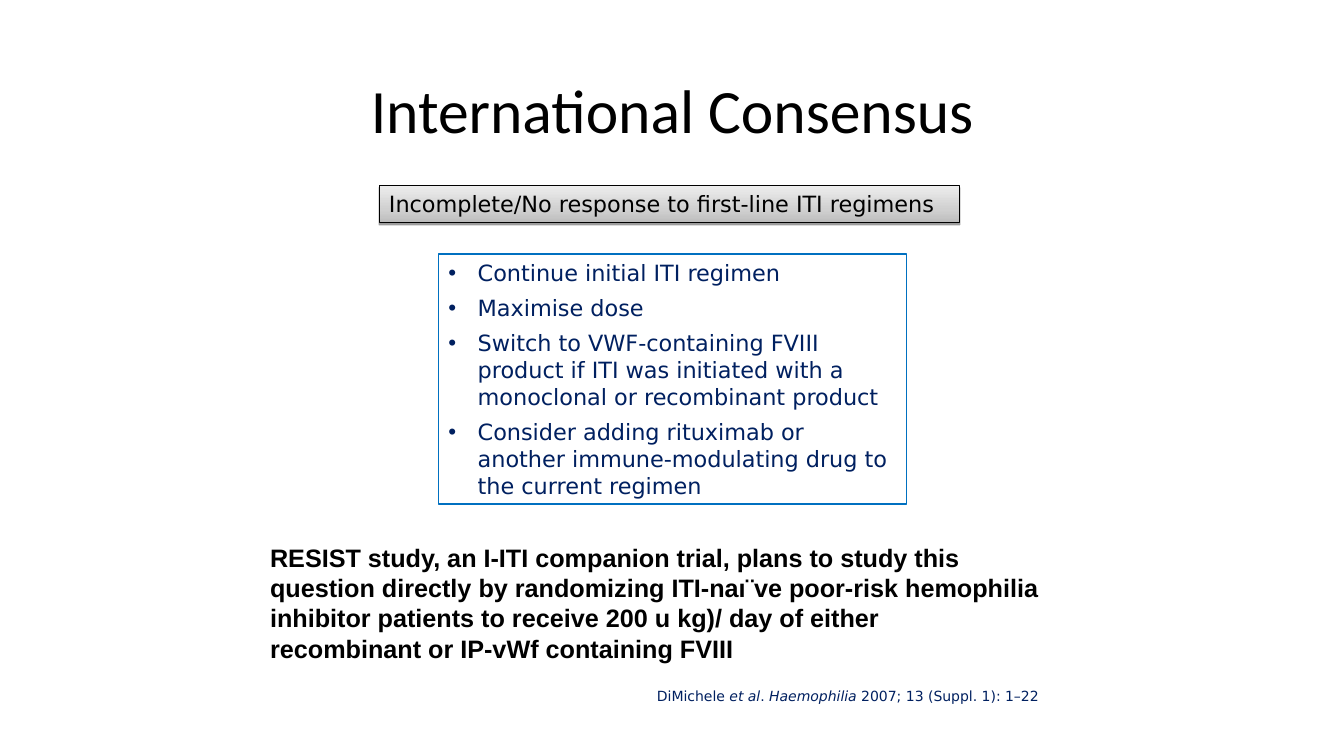
from dataclasses import dataclass

from lxml.etree import SubElement
from pptx import Presentation
from pptx.dml.color import RGBColor
from pptx.enum.shapes import MSO_SHAPE as Shape
from pptx.enum.text import MSO_ANCHOR as Anchor, MSO_AUTO_SIZE as AutoSize, PP_ALIGN as Align
from pptx.oxml.ns import qn
from pptx.util import Inches, Pt


@dataclass(frozen=True)
class Theme:
    black: str = "000000"
    white: str = "FFFFFF"
    navy: str = "002060"
    border: str = "0070C0"
    gradient: tuple = ((0, "BCBCBC"), (35, "D0D0D0"), (100, "EDEDED"))
    title_font: str = "Calibri"
    body_font: str = "DejaVu Sans"
    study_font: str = "Arial"
    title_size: int = 44
    body_size: int = 16
    study_size: int = 18
    citation_size: int = 10


THEME = Theme()

TREATMENT_OPTIONS = (
    "Continue initial ITI regimen",
    "Maximise dose",
    "Switch to VWF-containing FVIII product if ITI was initiated with a "
    "monoclonal or recombinant product",
    "Consider adding rituximab or another immune-modulating drug to the current regimen",
)
STUDY_LINES = (
    "RESIST study, an I-ITI companion trial, plans to study this",
    "question directly by randomizing ITI-naı¨ve poor-risk hemophilia",
    "inhibitor patients to receive 200 u kg)/ day of either",
    "recombinant or IP-vWf containing FVIII",
)
# Citation pieces: text, italic
CITATION = (
    ("DiMichele ", False),
    ("et al", True),
    (". ", False),
    ("Haemophilia", True),
    (" 2007; 13 (Suppl. 1): 1–22", False),
)


def place(box):
    return [Inches(value) for value in box]


def style(paragraph, font, size, color, bold=False, align=Align.LEFT):
    paragraph.alignment = align
    paragraph.font.name = font
    paragraph.font.size = Pt(size)
    paragraph.font.bold = bold
    paragraph.font.color.rgb = RGBColor.from_string(color)


def set_frame(shape, wrap=True, anchor=Anchor.TOP):
    frame = shape.text_frame
    frame.auto_size = AutoSize.SHAPE_TO_FIT_TEXT
    frame.word_wrap = wrap
    frame.vertical_anchor = anchor
    return frame


def add_lines(frame, lines):
    """Write one paragraph per line and return the paragraphs."""
    frame.text = "\n".join(lines)
    return frame.paragraphs


def add_panel(slide, box, line_color, line_width):
    panel = slide.shapes.add_shape(Shape.RECTANGLE, *place(box))
    panel.shadow.inherit = False
    panel.line.color.rgb = RGBColor.from_string(line_color)
    panel.line.width = Pt(line_width)
    return panel


def add_color(parent, color, alpha=None):
    element = SubElement(parent, qn("a:srgbClr"), val=color)
    if alpha is not None:
        SubElement(element, qn("a:alpha"), val=str(alpha * 1000))


def fill_gradient(shape, stops):
    shape.fill.gradient()
    shape.fill.gradient_angle = 90
    stop_list = shape.fill._xPr.find(qn("a:gradFill")).find(qn("a:gsLst"))
    for old_stop in list(stop_list):
        stop_list.remove(old_stop)
    for position, color in stops:
        add_color(SubElement(stop_list, qn("a:gs"), pos=str(position * 1000)), color)


def add_shadow(shape, color, alpha, distance):
    effects = shape._element.spPr.find(qn("a:effectLst"))
    shadow = SubElement(effects, qn("a:outerShdw"), blurRad="0", dist=str(Pt(distance)),
                        dir="5400000", rotWithShape="0")
    add_color(shadow, color, alpha)


def add_bullet(paragraph, color, indent):
    properties = paragraph._p.get_or_add_pPr()
    properties.set("marL", str(Inches(indent)))
    properties.set("indent", str(-Inches(indent)))
    add_color(SubElement(properties, qn("a:buClr")), color)
    SubElement(properties, qn("a:buFont"), typeface="Arial")
    SubElement(properties, qn("a:buChar"), char="•")


def add_title(slide, text, box):
    title = slide.shapes.title
    title.left, title.top, title.width, title.height = place(box)
    title.text_frame.text = text
    title.text_frame.vertical_anchor = Anchor.MIDDLE
    paragraph = title.text_frame.paragraphs[0]
    paragraph.line_spacing = 0.9
    style(paragraph, THEME.title_font, THEME.title_size, THEME.black, align=Align.CENTER)


def add_heading(slide, text, box):
    heading = add_panel(slide, box, THEME.black, 0.75)
    fill_gradient(heading, THEME.gradient)
    add_shadow(heading, THEME.black, 38, 1.6)
    for paragraph in add_lines(set_frame(heading, wrap=False), [text]):
        style(paragraph, THEME.body_font, THEME.body_size, THEME.black)


def add_options(slide, options, box):
    panel = add_panel(slide, box, THEME.border, 1)
    panel.fill.solid()
    panel.fill.fore_color.rgb = RGBColor.from_string(THEME.white)
    for index, paragraph in enumerate(add_lines(set_frame(panel), options)):
        paragraph.space_before = Pt(6 if index else 0)
        add_bullet(paragraph, THEME.navy, 0.29)
        style(paragraph, THEME.body_font, THEME.body_size, THEME.navy)


def add_citation(slide, pieces, box):
    frame = set_frame(slide.shapes.add_textbox(*place(box)), anchor=Anchor.BOTTOM)
    paragraph = frame.paragraphs[0]
    for text, italic in pieces:
        run = paragraph.add_run()
        run.text = text
        run.font.italic = italic
    style(paragraph, THEME.body_font, THEME.citation_size, THEME.navy, align=Align.RIGHT)


def add_study(slide, lines, box):
    frame = set_frame(slide.shapes.add_textbox(*place(box)))
    for paragraph in add_lines(frame, lines):
        style(paragraph, THEME.study_font, THEME.study_size, THEME.black, bold=True)


def main():
    presentation = Presentation()
    presentation.slide_width = Inches(13.33)
    presentation.slide_height = Inches(7.5)
    slide = presentation.slides.add_slide(presentation.slide_layouts.get_by_name("Title Only"))

    # Title and consensus recommendations
    add_title(slide, "International Consensus", (0.92, 0.4, 11.5, 1.45))
    add_heading(slide, "Incomplete/No response to first-line ITI regimens",
                (3.76, 1.84, 5.76, 0.37))
    add_options(slide, TREATMENT_OPTIONS, (4.35, 2.52, 4.64, 2.48))

    # Source and related trial
    add_citation(slide, CITATION, (5.31, 6.77, 5.09, 0.27))
    add_study(slide, STUDY_LINES, (2.58, 5.33, 8.58, 1.31))

    presentation.save("out.pptx")


if __name__ == "__main__":
    main()
